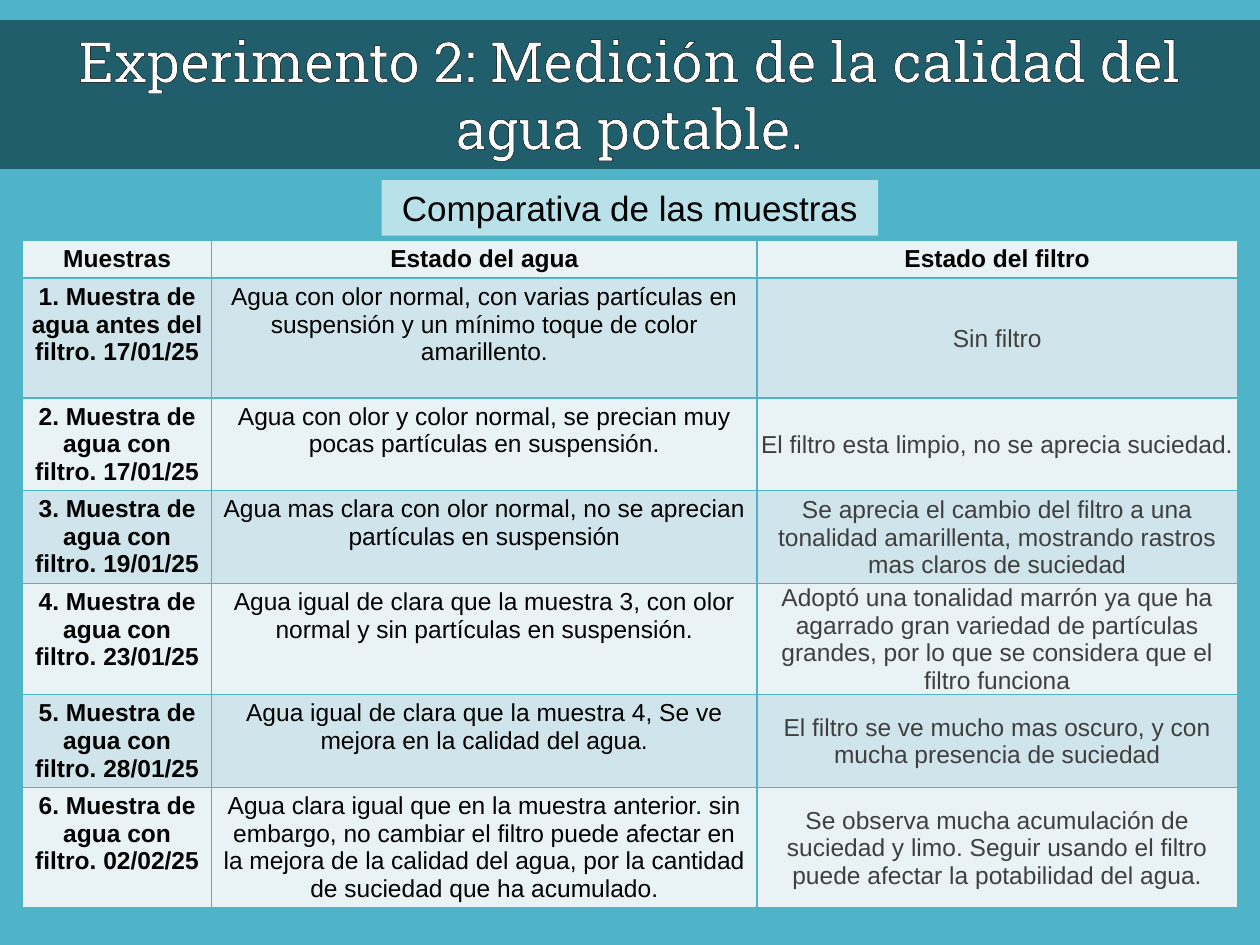
from lxml import etree
from pptx import Presentation
from pptx import util as u
from pptx.dml.color import RGBColor
from pptx.enum import shapes, text
from pptx.oxml.ns import qn

TITLE = "Experimento 2: Medición de la calidad del agua potable."
SUBTITLE = "Comparativa de las muestras"
ROWS = [
    ("Muestras", "Estado del agua", "Estado del filtro"),
    ("1. Muestra de agua antes del filtro. 17/01/25",
     "Agua con olor normal, con varias partículas en suspensión y un mínimo toque de color amarillento.",
     "Sin filtro"),
    ("2. Muestra de agua con filtro. 17/01/25",
     "Agua con olor y color normal, se precian muy pocas partículas en suspensión.",
     "El filtro esta limpio, no se aprecia suciedad."),
    ("3. Muestra de agua con filtro. 19/01/25",
     "Agua mas clara con olor normal, no se aprecian partículas en suspensión",
     "Se aprecia el cambio del filtro a una tonalidad amarillenta, mostrando rastros mas claros de suciedad"),
    ("4. Muestra de agua con filtro. 23/01/25",
     "Agua igual de clara que la muestra 3, con olor normal y sin partículas en suspensión.",
     "Adoptó una tonalidad marrón ya que ha agarrado gran variedad de partículas grandes, "
     "por lo que se considera que el filtro funciona"),
    ("5. Muestra de agua con filtro. 28/01/25",
     "Agua igual de clara que la muestra 4, Se ve mejora en la calidad del agua.",
     "El filtro se ve mucho mas oscuro, y con mucha presencia de suciedad"),
    ("6. Muestra de agua con filtro. 02/02/25",
     "Agua clara igual que en la muestra anterior. sin embargo, no cambiar el filtro puede afectar en "
     "la mejora de la calidad del agua, por la cantidad de suciedad que ha acumulado.",
     "Se observa mucha acumulación de suciedad y limo. Seguir usando el filtro puede afectar "
     "la potabilidad del agua."),
]
COLUMN_WIDTHS = [1.5, 4.33, 3.81]
ROW_HEIGHTS = [0.29, 0.95, 0.73, 0.73, 0.88, 0.73, 0.95]

AQUA = RGBColor(0x50, 0xB4, 0xC8)
PALE_AQUA = RGBColor(0xB9, 0xE1, 0xE9)
DARK_TEAL = RGBColor(0x21, 0x5E, 0x6B)
BANDS = [RGBColor(0xE9, 0xF2, 0xF5), RGBColor(0xD0, 0xE5, 0xEB)]
BLACK = RGBColor(0, 0, 0)
WHITE = RGBColor(0xFF, 0xFF, 0xFF)
GREY = RGBColor(0x3F, 0x3F, 0x3F)

TITLE_FONT = {"name": "Roboto Slab", "size": u.Pt(32)}
SUBTITLE_FONT = {"name": "Arial", "size": u.Pt(20)}
CELL_FONT = {"name": "Arial", "size": u.Pt(14)}
TEXT_MARGINS = {"margin_left": 0.07, "margin_top": 0.04, "margin_right": 0.07, "margin_bottom": 0.04}
FILTER_MARGINS = {"margin_left": 0.01, "margin_top": 0.01, "margin_right": 0.01, "margin_bottom": 0}


def write(frame, words, font, color, bold=False):
    """Put one centred run in a text frame."""
    para = frame.paragraphs[0]
    para.alignment = text.PP_ALIGN.CENTER
    span = para.add_run()
    span.text = words
    for name, value in {**font, "bold": bold}.items():
        setattr(span.font, name, value)
    span.font.color.rgb = color
    return span


def make_line(tag, color, points):
    line = etree.Element(qn(tag), w=str(u.Pt(points)))
    fill = etree.SubElement(line, qn("a:solidFill"))
    etree.SubElement(fill, qn("a:srgbClr"), val=str(color))
    return line


def add_band(page, place, color, words, font, font_color):
    box = page.shapes.add_shape(shapes.MSO_SHAPE.RECTANGLE, *map(u.Inches, place))
    box.shadow.inherit = False
    box.fill.solid()
    box.fill.fore_color.rgb = color
    box.line.fill.background()
    box.text_frame.word_wrap = True
    box.text_frame.vertical_anchor = text.MSO_ANCHOR.TOP
    box.text_frame.auto_size = text.MSO_AUTO_SIZE.SHAPE_TO_FIT_TEXT
    return write(box.text_frame, words, font, font_color)


def fill_cell(cell, words, row, column):
    is_filter = row > 0 and column == 2
    for side, inches in (FILTER_MARGINS if is_filter else TEXT_MARGINS).items():
        setattr(cell, side, u.Inches(inches))
    cell.vertical_anchor = text.MSO_ANCHOR.MIDDLE if is_filter else text.MSO_ANCHOR.TOP
    write(cell.text_frame, words, CELL_FONT, GREY if is_filter else BLACK, bold=row == 0 or column == 0)
    # Borders come before the fill in the cell properties
    properties = cell._tc.get_or_add_tcPr()
    for tag in ("a:lnL", "a:lnR", "a:lnT", "a:lnB"):
        properties.append(make_line(tag, AQUA, 1))
    cell.fill.solid()
    cell.fill.fore_color.rgb = BANDS[row % 2]


def main():
    deck = Presentation()
    deck.slide_width, deck.slide_height = u.Inches(10), u.Inches(7.5)
    page = deck.slides.add_slide(deck.slide_layouts[6])
    page.background.fill.solid()
    page.background.fill.fore_color.rgb = AQUA

    # Sample comparison table
    table = page.shapes.add_table(
        len(ROWS), len(COLUMN_WIDTHS), u.Inches(0.18), u.Inches(1.91),
        u.Inches(sum(COLUMN_WIDTHS)), u.Inches(sum(ROW_HEIGHTS))).table
    for column, width in zip(table.columns, COLUMN_WIDTHS):
        column.width = u.Inches(width)
    for row, height in zip(table.rows, ROW_HEIGHTS):
        row.height = u.Inches(height)
    for r, row in enumerate(ROWS):
        for c, words in enumerate(row):
            fill_cell(table.cell(r, c), words, r, c)

    # Subtitle and outlined title
    add_band(page, (3.03, 1.43, 3.94, 0.44), PALE_AQUA, SUBTITLE, SUBTITLE_FONT, BLACK)
    title = add_band(page, (0, 0.16, 10, 1.18), DARK_TEAL, TITLE, TITLE_FONT, WHITE)
    title.font._element.insert(0, make_line("a:ln", BLACK, 0.75))

    deck.save("out.pptx")


if __name__ == "__main__":
    main()
